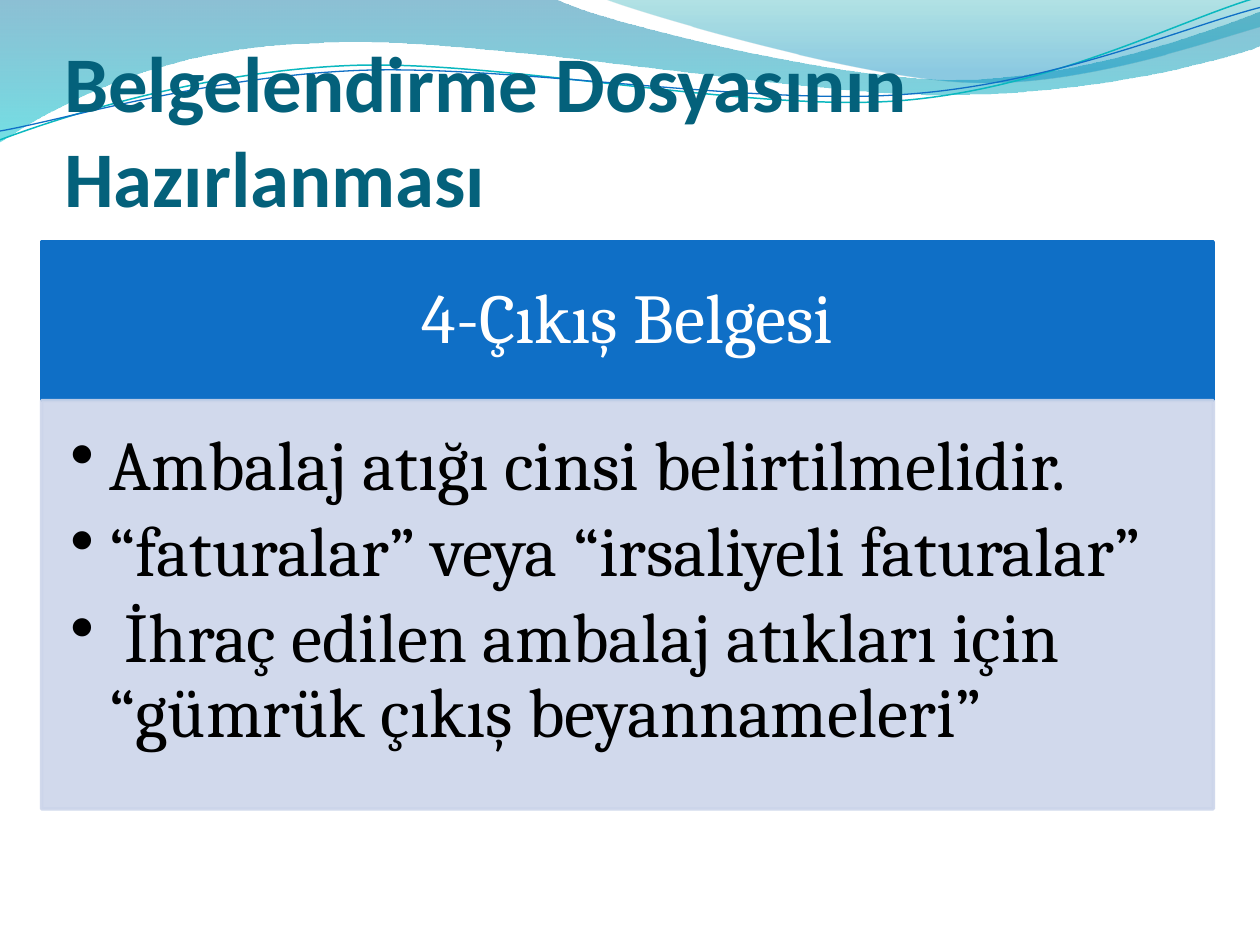
import math
from dataclasses import dataclass

from lxml import etree
from pptx import Presentation
from pptx import util as u
from pptx.dml.color import RGBColor
from pptx.enum import lang, shapes, text
from pptx.oxml import ns


@dataclass(frozen=True)
class Theme:
    title_color: str = "04617B"
    header_color: str = "0F6FC6"
    panel_color: str = "CCD5EA"
    light: str = "FFFFFF"
    dark: str = "000000"
    teal_line: str = "0AB8BF"
    # Gradient stops: position, colour, opacity in percent
    wide_wave: tuple = ((0, "0074A1", 45), (1, "00C6CF", 55))
    corner_wave: tuple = ((0, "00A1A9", 30), (0.8, "008BBF", 45))
    title_font: str = "Calibri"
    body_font: str = "Cambria"
    title_size: int = 45
    body_size: int = 40


THEME = Theme()
STRAND_TILT = -2.7

# An outline is a list of segments in inches. One point is the start or a
# straight line; three points are two control points and the end of a curve.
WIDE_WAVE = [[(0, 0)], [(4.4, -0.01)],
             [(4.76, 0.17), (6.64, 0.63), (7.58, 0.63)],
             [(8.53, 0.63), (9.58, 0.26), (10, 0.09)],
             [(10.01, 0.36)],
             [(9.83, 0.44), (8.7, 0.76), (7.46, 0.75)],
             [(6.22, 0.75), (3.82, 0.28), (2.57, 0.34)],
             [(1.29, 0.36), (0.46, 0.83), (-0.01, 1.13)],
             [(0, 0)]]
CORNER_WAVE = [[(4.79, -0.01)],
               [(5.09, 0.11), (6.82, 0.62), (7.69, 0.65)],
               [(8.56, 0.69), (9.61, 0.32), (10, 0.21)],
               [(10, 0)], [(4.79, -0.01)]]
TEAL_STRAND = [[(0, 1.11)],
               [(0.48, 0.93), (1.58, 0.57), (2.77, 0.52)],
               [(3.95, 0.47), (5.93, 0.89), (7.13, 0.8)],
               [(8.33, 0.71), (9.38, 0.15), (9.98, -0.02)]]
BLUE_STRAND = [[(0, 1.04)],
               [(0.47, 0.96), (1.64, 0.61), (2.83, 0.56)],
               [(4.03, 0.51), (5.97, 0.84), (7.17, 0.75)],
               [(8.36, 0.67), (9.41, 0.21), (10, 0.06)]]


def rgb(color):
    return RGBColor.from_string(color)


def set_alpha(parent, percents):
    """Give the colours under an XML element their opacities, in order."""
    for color, percent in zip(parent.iter(ns.qn("a:srgbClr")), percents):
        etree.SubElement(color, ns.qn("a:alpha")).set("val", str(percent * 1000))


def turn(segments, degrees, center):
    """Rotate every point clockwise around a center."""
    cos, sin = math.cos(math.radians(degrees)), math.sin(math.radians(degrees))
    mid_x, mid_y = center
    return [[(mid_x + (x - mid_x) * cos - (y - mid_y) * sin,
              mid_y + (x - mid_x) * sin + (y - mid_y) * cos) for x, y in segment]
            for segment in segments]


def bend(outline, segments):
    """Join each three straight steps of a curved segment into one cubic curve."""
    steps = iter(list(outline._element.iter(ns.qn("a:lnTo"))))
    for segment in segments[1:]:
        group = [next(steps) for _ in segment]
        if len(group) == 3:
            curve = etree.Element(ns.qn("a:cubicBezTo"))
            group[0].addprevious(curve)
            for step in group:
                curve.append(step[0])
                step.getparent().remove(step)


def add_outline(slide, segments, close):
    start, *rest = [(u.Inches(x), u.Inches(y)) for segment in segments for x, y in segment]
    builder = slide.shapes.build_freeform(*start, scale=1.0)
    builder.add_line_segments(rest, close=close)
    outline = builder.convert_to_shape()
    outline.shadow.inherit = False
    bend(outline, segments)
    return outline


def add_wave(slide, segments, stops):
    wave = add_outline(slide, segments, close=True)
    wave.line.fill.background()
    wave.fill.gradient()
    wave.fill.gradient_angle = 270
    for stop, (position, color, _) in zip(wave.fill.gradient_stops, stops):
        stop.position = position
        stop.color.rgb = rgb(color)
    set_alpha(wave._element.spPr, [opacity for _, _, opacity in stops])


def add_strand(slide, segments, center, color, width):
    strand = add_outline(slide, turn(segments, -STRAND_TILT, center), close=False)
    strand.rotation = STRAND_TILT
    strand.fill.background()
    strand.line.color.rgb = rgb(color)
    strand.line.width = u.Pt(width)


def add_panel(slide, left, top, width, height, color, opacity=100):
    panel = slide.shapes.add_shape(shapes.MSO_SHAPE.RECTANGLE, *map(u.Inches, (left, top, width, height)))
    panel.shadow.inherit = False
    panel.fill.solid()
    panel.fill.fore_color.rgb = rgb(color)
    panel.line.color.rgb = rgb(color)
    panel.line.width = u.Pt(2)
    if opacity < 100:
        set_alpha(panel._element.spPr, [opacity, opacity])
    return panel


def add_bullet(para, indent):
    props = para._p.get_or_add_pPr()
    props.set("marL", str(u.Inches(indent)))
    props.set("indent", str(u.Inches(-indent)))
    etree.SubElement(props, ns.qn("a:buChar")).set("char", "•")


def write_text(box, lines, *, font, size, color, bold=False, align=text.PP_ALIGN.LEFT,
               anchor=text.MSO_ANCHOR.TOP, insets=(0, 0, 0, 0),
               line_spacing=1.0, space_after=0, bullet_indent=None):
    """Fill a shape with paragraphs; insets run left, top, right, bottom."""
    frame = box.text_frame
    frame.word_wrap = True
    frame.vertical_anchor = anchor
    (frame.margin_left, frame.margin_top,
     frame.margin_right, frame.margin_bottom) = map(u.Inches, insets)
    for index, line in enumerate(lines):
        para = frame.add_paragraph() if index else frame.paragraphs[0]
        para.alignment = align
        para.line_spacing = line_spacing
        para.space_after = u.Pt(space_after)
        if bullet_indent:
            add_bullet(para, bullet_indent)
        span = para.add_run()
        span.text = line
        span.font.language_id = lang.MSO_LANGUAGE_ID.TURKISH
        span.font.name = font
        span.font.size = u.Pt(size)
        span.font.bold = bold
        span.font.color.rgb = rgb(color)


def main():
    deck = Presentation()
    deck.slide_width, deck.slide_height = u.Inches(10), u.Inches(7.5)
    slide = deck.slides.add_slide(deck.slide_layouts[6])

    add_wave(slide, WIDE_WAVE, THEME.wide_wave)
    add_wave(slide, CORNER_WAVE, THEME.corner_wave)
    add_strand(slide, TEAL_STRAND, (4.99, 0.58), THEME.teal_line, 0.85)
    add_strand(slide, BLUE_STRAND, (5, 0.59), THEME.header_color, 0.75)

    title = slide.shapes.add_textbox(*map(u.Inches, (0.51, 0.52, 10, 1.25)))
    write_text(title, ["Belgelendirme Dosyasının Hazırlanması"],
               font=THEME.title_font, size=THEME.title_size, color=THEME.title_color,
               bold=True, anchor=text.MSO_ANCHOR.BOTTOM, insets=(0, 0.05, 0, 0))

    left, top, width, header_height = 0.33, 1.92, 9.3, 1.26
    header = add_panel(slide, left, top, width, header_height, THEME.header_color)
    write_text(header, ["4-Çıkış Belgesi"],
               font=THEME.body_font, size=THEME.body_size, color=THEME.light,
               align=text.PP_ALIGN.CENTER, anchor=text.MSO_ANCHOR.MIDDLE,
               insets=(0.31, 0.18, 0.31, 0.18), line_spacing=0.9)

    body = add_panel(slide, left, top + header_height, width, 3.24, THEME.panel_color, opacity=90)
    write_text(body, ["Ambalaj atığı cinsi belirtilmelidir.",
                      "“faturalar” veya “irsaliyeli faturalar”",
                      " İhraç edilen ambalaj atıkları için “gümrük çıkış beyannameleri”"],
               font=THEME.body_font, size=THEME.body_size, color=THEME.dark,
               insets=(0.23, 0.23, 0.31, 0.35), line_spacing=0.9,
               space_after=6, bullet_indent=0.31)

    deck.save("out.pptx")


if __name__ == "__main__":
    main()
